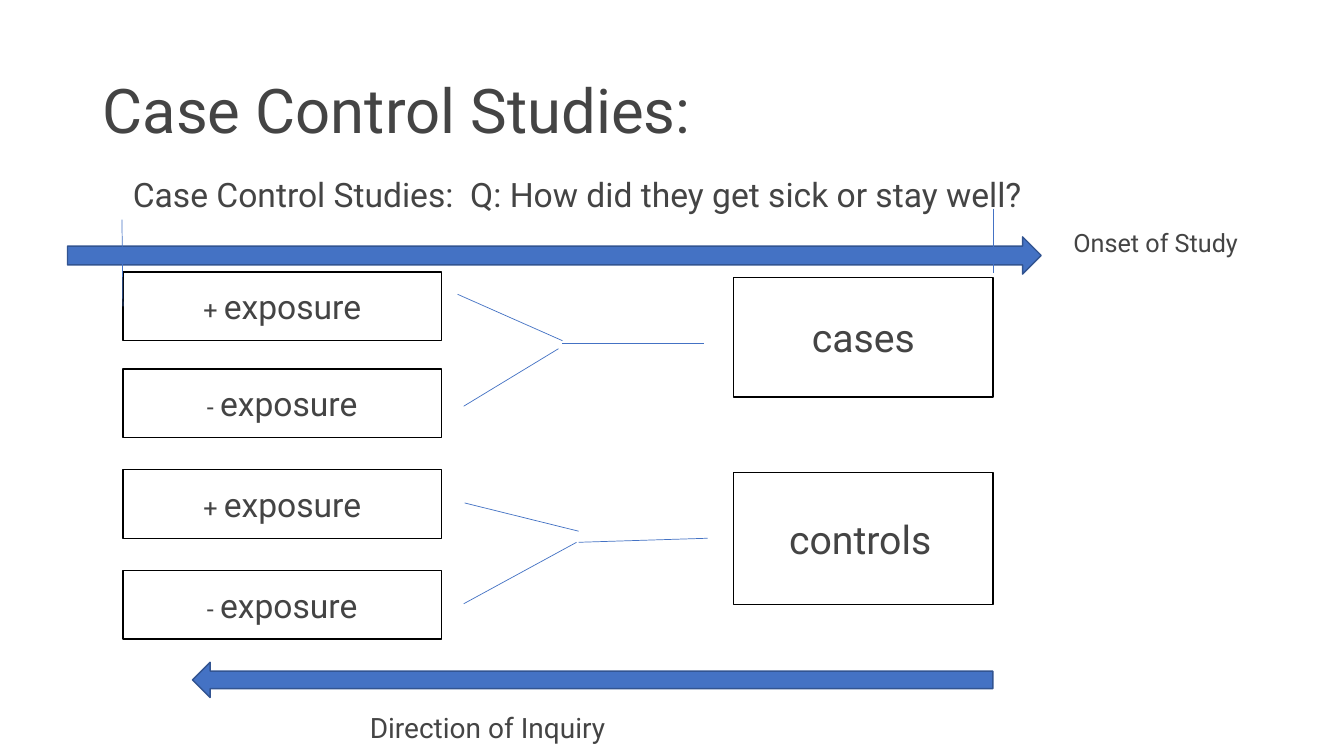
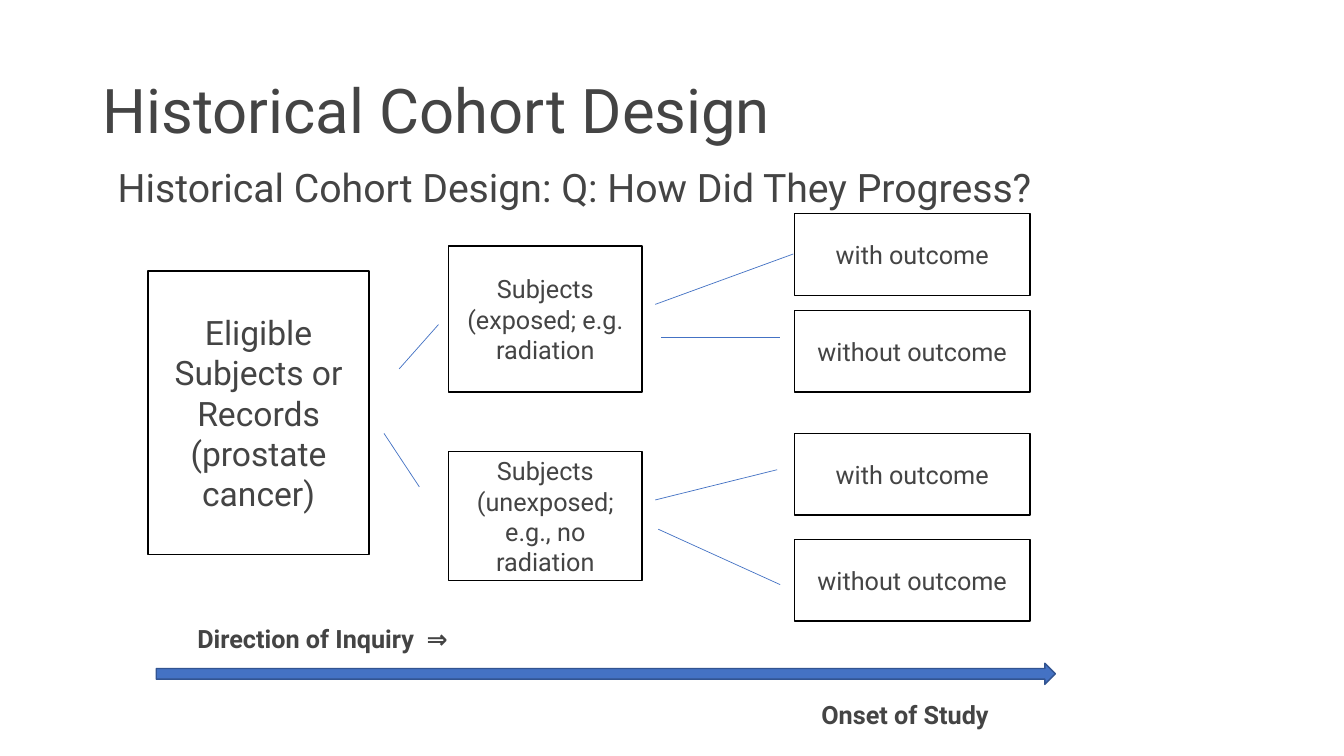
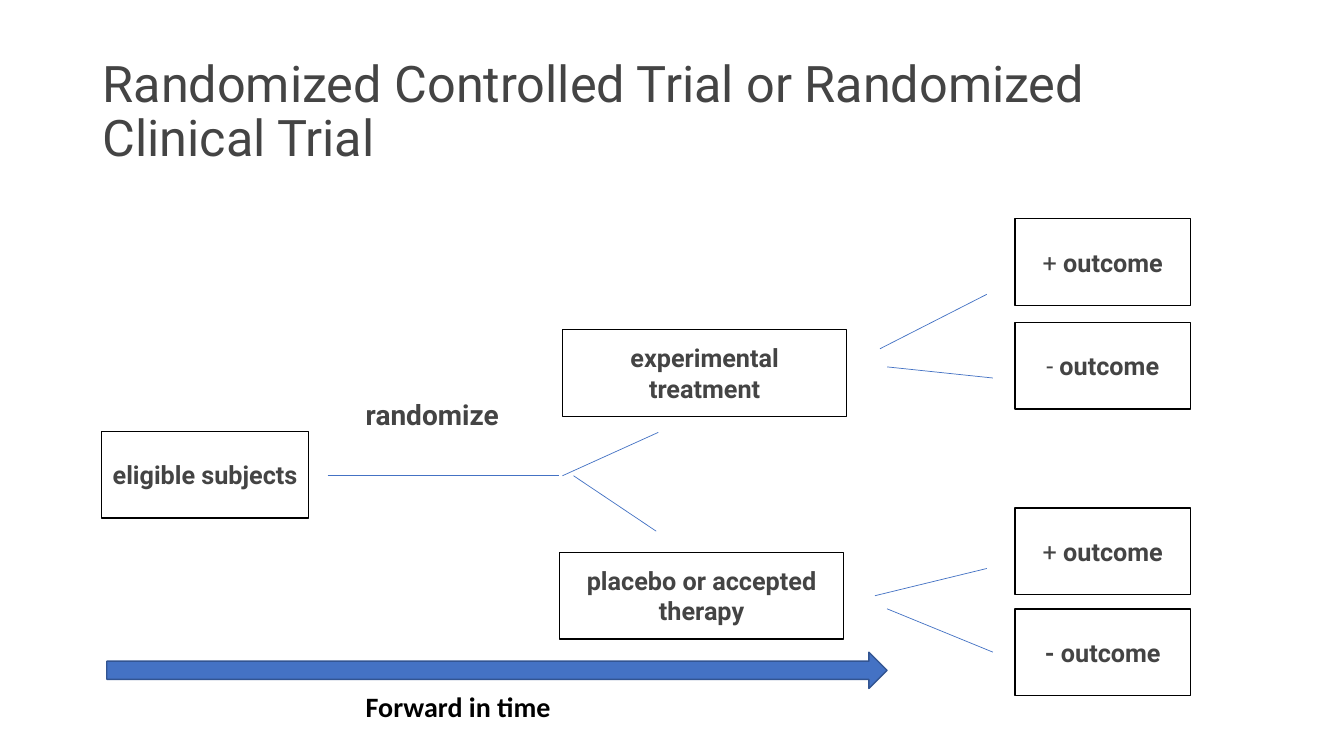
from dataclasses import dataclass

from lxml.etree import SubElement
from pptx import Presentation
from pptx.dml.color import RGBColor
from pptx.enum.shapes import MSO_CONNECTOR, MSO_SHAPE
from pptx.enum.text import MSO_ANCHOR, MSO_AUTO_SIZE, PP_ALIGN
from pptx.oxml.ns import qn
from pptx.util import Inches, Pt

CELL = Inches(0.1)
COLUMNS, ROWS = 133.33, 75
INK = RGBColor(0x44, 0x44, 0x44)
BLACK = RGBColor(0, 0, 0)
WHITE = RGBColor(0xFF, 0xFF, 0xFF)
BLUE = RGBColor(0x44, 0x72, 0xC4)
NAVY = RGBColor(0x32, 0x54, 0x91)


@dataclass(frozen=True)
class Box:
    """An area of the slide grid, in columns and rows."""
    left: float
    top: float
    width: float
    height: float

    def area(self, left, top, width, height):
        """Return an area placed relative to this one."""
        return Box(self.left + left, self.top + top, width, height)

    def point(self, column, row):
        """Return a slide position for a point relative to this area."""
        return round((self.left + column) * CELL), round((self.top + row) * CELL)

    def frame(self):
        """Return left, top, width and height in slide units."""
        return (*self.point(0, 0), round(self.width * CELL), round(self.height * CELL))


@dataclass(frozen=True)
class Span:
    """A stretch of text in one style."""
    text: str
    size: float = 18
    bold: bool = False
    font: str = "Roboto"
    color: RGBColor = INK


SLIDE = Box(0, 0, COLUMNS, ROWS)
TITLE = SLIDE.area(9.2, 4, 115, 14.5)


def write(para, spans):
    """Add spans to a paragraph, run by run."""
    for span in spans:
        run = para.add_run()
        run.text = span.text
        run.font.size = Pt(span.size)
        run.font.bold = span.bold
        run.font.name = span.font
        run.font.color.rgb = span.color


def add_title(page, text, size=44):
    """Place the slide title in the shared title area."""
    frame = page.shapes.add_textbox(*TITLE.frame()).text_frame
    frame.word_wrap = True
    frame.vertical_anchor = MSO_ANCHOR.MIDDLE
    para = frame.paragraphs[0]
    para.line_spacing = 0.9
    write(para, [Span(text, size)])


def add_label(page, box, span):
    """Place a single line of free text."""
    frame = page.shapes.add_textbox(*box.frame()).text_frame
    frame.word_wrap = False
    frame.auto_size = MSO_AUTO_SIZE.SHAPE_TO_FIT_TEXT
    write(frame.paragraphs[0], [span])


def add_solid(page, kind, box, fill, outline):
    """Draw a filled preset shape with a thin outline."""
    shape = page.shapes.add_shape(kind, *box.frame())
    shape.shadow.inherit = False
    shape.fill.solid()
    shape.fill.fore_color.rgb = fill
    shape.line.color.rgb = outline
    shape.line.width = Pt(1)
    return shape


def add_node(page, box, *spans):
    """Draw an outlined box with centred text."""
    frame = add_solid(page, MSO_SHAPE.RECTANGLE, box, WHITE, BLACK).text_frame
    frame.word_wrap = True
    frame.vertical_anchor = MSO_ANCHOR.MIDDLE
    para = frame.paragraphs[0]
    para.alignment = PP_ALIGN.CENTER
    write(para, spans)


def add_time_arrow(page, box, kind=MSO_SHAPE.RIGHT_ARROW):
    """Draw a block arrow for the course of time."""
    add_solid(page, kind, box, BLUE, NAVY)


def add_links(page, box, links):
    """Draw thin lines between points relative to the box."""
    for start, end in links:
        link = page.shapes.add_connector(
            MSO_CONNECTOR.STRAIGHT, *box.point(*start), *box.point(*end))
        link.line.color.rgb = BLUE
        link.line.width = Pt(0.5)
        SubElement(link._element.spPr, qn("a:effectLst"))


def add_arm(page, box, hub, hub_spans, pair, pair_spans, links):
    """Draw a hub box linked to two boxes at the top and bottom of the area."""
    left, width, height = pair
    add_node(page, box.area(*hub), *hub_spans)
    for top, spans in zip((0, box.height - height), pair_spans):
        add_node(page, box.area(left, top, width, height), *spans)
    add_links(page, box, links)


def case_control(page):
    """Build the case control slide."""
    add_title(page, "Case Control Studies:")
    add_label(page, SLIDE.area(12.2, 16.8, 92, 5),
              Span("Case Control Studies:  Q: How did they get sick or stay well?", 24))
    exposures = [(Span(sign), Span("exposure", 24)) for sign in ("+ ", "- ")]
    pair = (0, 31.6, 6.8)
    add_arm(page, SLIDE.area(12.2, 27, 86.3, 16.4),
            (60.6, 0.5, 25.7, 11.9), [Span("cases", 28)], pair, exposures,
            [((33.2, 2.2), (43.6, 6.8)), ((33.8, 13.3), (43.2, 7.6)),
             ((43.6, 7.1), (57.6, 7.1))])
    add_arm(page, SLIDE.area(12.2, 46.6, 86.3, 16.8),
            (60.6, 0.3, 25.7, 13.1), [Span("controls", 28), Span(" ")], pair, exposures,
            [((33.9, 3.3), (45.2, 6.1)), ((33.8, 13.3), (45, 7.2)),
             ((45.2, 7.2), (58, 6.8))])
    add_time_arrow(page, SLIDE.area(6.7, 23.5, 96.6, 3.7))
    add_time_arrow(page, SLIDE.area(19.1, 65.7, 79.4, 3.5), MSO_SHAPE.LEFT_ARROW)
    add_links(page, SLIDE, [((12.1, 21.8), (12.2, 30.4)), ((98.5, 20.7), (98.5, 27.1))])
    add_label(page, SLIDE.area(105.5, 22.1, 18.7, 4), Span("Onset of Study"))
    add_label(page, SLIDE.area(35.7, 70, 26.2, 4.4), Span("Direction of Inquiry", 20))


def historical_cohort(page):
    """Build the historical cohort slide."""
    add_title(page, "Historical Cohort Design")
    add_label(page, SLIDE.area(10.7, 15.7, 94, 5.7),
              Span("Historical Cohort Design: Q: How Did They Progress?", 28))
    add_node(page, SLIDE.area(14.7, 26.9, 21.9, 28.1),
             Span("Eligible Subjects or Records (prostate cancer)", 24))
    add_links(page, SLIDE, [((39.6, 36.6), (43.5, 32.2)), ((38.1, 43), (41.6, 48.3))])
    outcomes = [[Span("with outcome")], [Span("without outcome")]]
    pair = (34.3, 23.4, 8.1)
    add_arm(page, SLIDE.area(44.5, 21.2, 57.7, 17.7),
            (0, 3.2, 19.2, 14.5), [Span("Subjects (exposed; e.g. radiation")], pair, outcomes,
            [((20.5, 9), (34.2, 4)), ((21.1, 12.3), (32.9, 12.3))])
    add_arm(page, SLIDE.area(44.5, 43, 57.7, 18.6),
            (0, 1.8, 19.2, 12.8), [Span("Subjects (unexposed; e.g., no radiation")],
            pair, outcomes,
            [((20.5, 6.6), (32.6, 3.6)), ((20.8, 9.5), (32.9, 15))])
    add_time_arrow(page, SLIDE.area(15.5, 65.8, 89.2, 2.1))
    add_label(page, SLIDE.area(18.6, 61.3, 29, 4), Span("Direction of Inquiry  ⇒", bold=True))
    add_label(page, SLIDE.area(80.5, 68.9, 20, 4), Span("Onset of Study", bold=True))


def randomized_trial(page):
    """Build the randomized trial slide."""
    add_title(page, "Randomized Controlled Trial or Randomized Clinical Trial", 36)
    add_node(page, SLIDE.area(10.1, 42.8, 20.5, 8.6), Span("eligible subjects", bold=True))
    add_label(page, SLIDE.area(35.3, 38.9, 16.7, 4.4), Span("randomize", 20, True))
    add_links(page, SLIDE, [((32.5, 47.2), (55.5, 47.2)), ((55.8, 47.2), (65.3, 42.9)),
                            ((56.9, 47.2), (65.1, 52.7))])
    outcome = Span("outcome", bold=True)
    positive, negative = (Span("+ "), outcome), (Span("- "), outcome)
    add_arm(page, SLIDE.area(55.8, 21.7, 62.3, 18.9),
            (0, 11, 28.2, 8.6), [Span("experimental treatment", bold=True)],
            (44.9, 17.4, 8.6), [positive, negative],
            [((31.5, 12.9), (42.1, 7.5)), ((32.2, 14.7), (42.7, 15.8))])
    add_arm(page, SLIDE.area(55.5, 50.4, 62.6, 18.6),
            (0, 4.4, 28.2, 8.6), [Span("placebo or accepted therapy", bold=True)],
            (45.2, 17.4, 8.6), [positive, [Span("- outcome", bold=True)]],
            [((31.3, 8.7), (42.4, 6)), ((32.5, 10), (43, 14.3))])
    add_time_arrow(page, SLIDE.area(10.6, 64.7, 77.4, 3.6))
    add_label(page, SLIDE.area(35.3, 67.9, 20.5, 4.4),
              Span("Forward in time", 20, True, "Calibri", BLACK))


def main():
    """Build and save the deck."""
    deck = Presentation()
    deck.slide_width, deck.slide_height = SLIDE.frame()[2:]
    for build in (case_control, historical_cohort, randomized_trial):
        build(deck.slides.add_slide(deck.slide_layouts[6]))
    deck.save("out.pptx")


if __name__ == "__main__":
    main()
